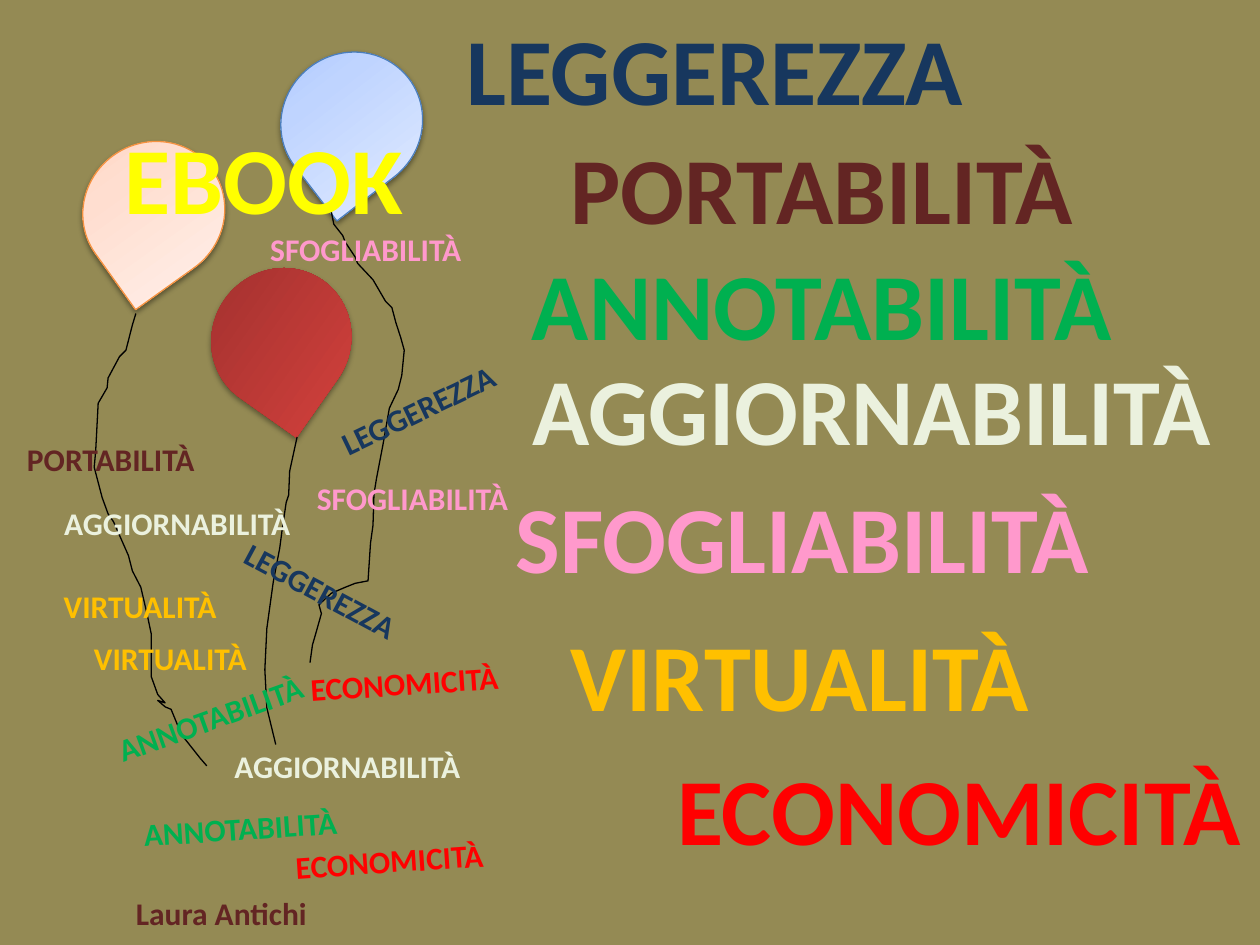
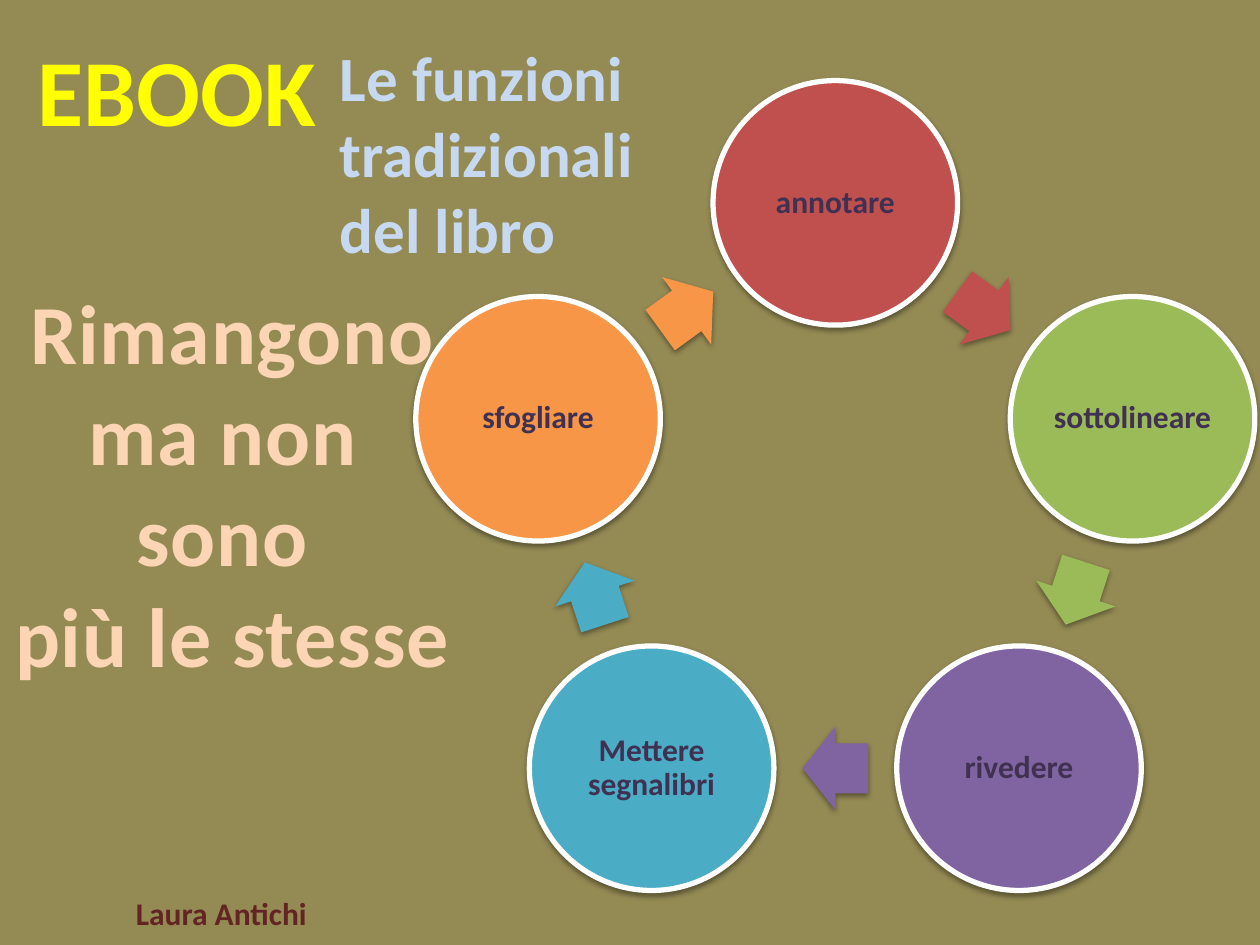
from math import cos, pi, sin

from lxml import etree
from pptx import Presentation
from pptx.dml.color import RGBColor
from pptx.enum.shapes import MSO_SHAPE as SHAPE
from pptx.enum.text import MSO_ANCHOR as ANCHOR, MSO_AUTO_SIZE as AUTO, PP_ALIGN as ALIGN
from pptx.oxml import parse_xml
from pptx.oxml.ns import nsdecls, qn
from pptx.util import Cm, Pt

OLIVE, BROWN, YELLOW, NAVY = "948A54", "632523", "FFFF00", "17375E"
GREEN, CREAM, PINK, AMBER, RED = "00B050", "EBF1DE", "FF99CC", "FFC000", "FF0000"
OUTLINE, PLUM, WHITE, BLACK = "5E457C", "403152", "FFFFFF", "000000"
PALE_BLUE, PEACH = "C6D9F1", "FCD5B5"
BIG, SMALL = 54, 18
LINE_HEIGHT = {BIG: 2.57, SMALL: 1.02}

# left, top, rotation, gradient stops, line, shadow opacity and distance
BALLOONS = [
    (1.65, 2.87, 144.4, [(0, "FFD2BD"), (35, "FFDED0"), (100, "FFF2ED")], "F69240", 38, 1.6),
    (4.22, 5.44, 125.2, [(0, "9C2F2D"), (80, "CB3E3A"), (100, "CE3B37")], None, 35, 1.8),
    (5.64, 1.07, 142.4, [(0, "A4C4FF"), (35, "BFD4FF"), (100, "E6EEFF")], "4B7EBC", 38, 1.6),
]
STRINGS = [
    [(2.74, 6.32), (2.67, 6.55), (2.54, 7.06), (2.41, 7.19), (2.18, 7.62), (2.16, 7.82),
     (1.98, 8.13), (1.93, 9.09), (1.9, 9.42), (2.06, 10.03), (2.18, 10.36), (2.29, 10.52),
     (2.59, 11.2), (2.67, 11.51), (2.84, 11.84), (2.97, 12.4), (3.05, 12.78), (3.05, 13.64),
     (3.18, 14), (3.33, 14.17), (3.18, 14.12), (3.33, 14.25), (3.45, 14.3), (3.66, 14.81),
     (4.04, 15.29), (4.17, 15.44)],
    [(5.99, 8.81), (5.84, 9.5), (5.82, 9.98), (5.77, 10.13), (5.69, 10.67), (5.64, 11.05),
     (5.51, 11.73), (5.46, 12.09), (5.38, 12.67), (5.34, 13.5), (5.38, 14.27), (5.56, 15.01)],
    [(6.68, 4.27), (6.73, 4.52), (6.91, 4.75), (6.96, 4.88), (7.16, 5.18), (7.21, 5.31),
     (7.52, 5.64), (7.77, 6.07), (7.9, 6.2), (7.98, 6.5), (8.08, 6.81), (8.15, 7.06),
     (8.1, 7.57), (8.03, 7.85), (7.85, 8.23), (7.72, 8.97), (7.59, 9.65), (7.54, 9.96),
     (7.52, 10.59), (7.47, 10.95), (7.42, 11.71), (7.16, 11.76), (6.96, 11.84), (6.68, 11.96),
     (6.43, 12.19), (6.48, 12.37), (6.35, 12.83), (6.3, 13), (6.25, 13.36)],
]
# word, colour, big label (left, top, width), small width, small labels (left, top, rotation)
QUALITIES = [
    ("LEGGEREZZA", NAVY, (9.09, 0.1, 10.64), 3.89, [(6.48, 7.75, 334.4), (4.52, 11.4, 28.2)]),
    ("PORTABILITÀ", BROWN, (11.2, 2.49, 10.74), 3.91, [(0.28, 8.74, 0)]),
    ("ANNOTABILITÀ", GREEN, (10.41, 4.83, 12.32), 4.45,
     [(2.01, 13.97, 340.1), (2.62, 16.18, 356.2)]),
    ("AGGIORNABILITÀ", CREAM, (10.41, 6.96, 14.33), 5.11, [(4.45, 14.94, 0), (1.02, 10.03, 0)]),
    ("VIRTUALITÀ", AMBER, (11.2, 12.32, 9.86), 3.61, [(1.63, 12.75, 0), (1.02, 11.71, 0)]),
    ("ECONOMICITÀ", RED, (13.34, 15.01, 11.99), 4.32,
     [(5.69, 16.84, 356.2), (5.99, 13.26, 356.2)]),
    ("SFOGLIABILITÀ", PINK, (10.08, 9.53, 12.19), 4.39, [(5.18, 4.52, 0), (6.12, 9.53, 0)]),
]
FUNCTIONS = [("annotare", "C0504D"), ("sottolineare", "9BBB59"), ("rivedere", "8064A2"),
             ("Mettere segnalibri", "4BACC6"), ("sfogliare", "F79646")]


def rgb(value):
    return RGBColor.from_string(value)


def write(tf, text, size=SMALL, color=BROWN, align=ALIGN.LEFT, outline=None,
          char_space=None, line_spacing=None):
    """Fill a text frame, one paragraph for each line of text."""
    for i, line in enumerate(text.split("\n")):
        p = tf.paragraphs[0] if i == 0 else tf.add_paragraph()
        p.alignment = align
        if line_spacing:
            p.line_spacing = line_spacing
        r = p.add_run()
        r.text = line
        r.font.name, r.font.size, r.font.bold = "Calibri", Pt(size), True
        r.font.color.rgb = rgb(color)
        rpr = r.font._element
        if char_space:
            rpr.set("spc", str(round(char_space * 100)))
        if outline:
            rpr.insert(0, parse_xml(
                f'<a:ln {nsdecls("a")} w="{Pt(0.71)}"><a:solidFill>'
                f'<a:srgbClr val="{outline}"/></a:solidFill></a:ln>'))


class Deck:
    def __init__(self):
        self.prs = Presentation()
        self.prs.slide_width, self.prs.slide_height = Cm(25.4), Cm(19.05)
        fill = self.prs.slide_master.background.fill
        fill.solid()
        fill.fore_color.rgb = rgb(OLIVE)

    def new_slide(self):
        self.s = self.prs.slides.add_slide(self.prs.slide_layouts[6])
        self.text("Laura Antichi", 2.49, 17.9, 18.44, 1.02)

    def text(self, text, left, top, width, height, rotation=0, wrap=True, **style):
        sp = self.s.shapes.add_textbox(Cm(left), Cm(top), Cm(width), Cm(height))
        sp.rotation = rotation
        tf = sp.text_frame
        tf.word_wrap, tf.auto_size = wrap, AUTO.SHAPE_TO_FIT_TEXT
        write(tf, text, **style)

    def label(self, text, left, top, width, color, size=BIG, rotation=0):
        """Add a centred, outlined word on one line."""
        self.text(text, left, top, width, LINE_HEIGHT[size], rotation, wrap=False, size=size,
                  color=color, align=ALIGN.CENTER, outline=OUTLINE)

    def heading(self, left, top):
        self.label("EBOOK", left, top, 6.17, YELLOW)

    def shape(self, kind, left, top, width, height, fill=None, line=None, line_width=0.75,
              rotation=0, opacity=38, distance=1.6):
        """Add a preset shape with a soft shadow below it."""
        sp = self.s.shapes.add_shape(kind, Cm(left), Cm(top), Cm(width), Cm(height))
        sp.rotation = rotation
        if fill:
            sp.fill.solid()
            sp.fill.fore_color.rgb = rgb(fill)
        self.outline(sp, line, line_width)
        sp.shadow.inherit = False
        effects = sp._element.spPr.find(qn("a:effectLst"))
        effects.append(parse_xml(
            f'<a:outerShdw {nsdecls("a")} blurRad="{Pt(3.1)}" dist="{Pt(distance)}" '
            f'dir="5400000" rotWithShape="0"><a:srgbClr val="{BLACK}">'
            f'<a:alpha val="{opacity * 1000}"/></a:srgbClr></a:outerShdw>'))
        return sp

    def outline(self, sp, color, width):
        if color:
            sp.line.color.rgb = rgb(color)
            sp.line.width = Pt(width)
        else:
            sp.line.fill.background()

    def balloon(self, left, top, rotation, stops, line, opacity, distance):
        sp = self.shape(SHAPE.TEAR, left, top, 2.9, 2.79, line=line, rotation=rotation,
                        opacity=opacity, distance=distance)
        sp.fill.gradient()
        grad = sp._element.spPr.find(qn("a:gradFill"))
        for child in list(grad):
            grad.remove(child)
        gs_list = etree.SubElement(grad, qn("a:gsLst"))
        for position, color in stops:
            gs = etree.SubElement(gs_list, qn("a:gs"), pos=str(position * 1000))
            etree.SubElement(gs, qn("a:srgbClr"), val=color)
        etree.SubElement(grad, qn("a:lin"), ang=str(270 * 60000), scaled="0")
        grad.set("rotWithShape", "1")

    def string(self, points):
        start, *rest = [(round(x * 100), round(y * 100)) for x, y in points]
        builder = self.s.shapes.build_freeform(*start, scale=Cm(0.01))
        builder.add_line_segments(rest, close=False)
        sp = builder.convert_to_shape()
        sp.fill.background()
        sp.shadow.inherit = False
        self.outline(sp, BLACK, 0.75)

    def circle(self, text, x, y, size, color):
        sp = self.shape(SHAPE.OVAL, x - size / 2, y - size / 2, size, size, color, WHITE, 3)
        tf = sp.text_frame
        tf.word_wrap, tf.vertical_anchor = True, ANCHOR.MIDDLE
        tf.margin_left = tf.margin_right = tf.margin_top = tf.margin_bottom = Cm(0.08)
        write(tf, text, color=PLUM, align=ALIGN.CENTER, line_spacing=0.9)

    def arrow(self, x, y, rotation, color):
        width, height = 1.32, 1.68
        sp = self.shape(SHAPE.RIGHT_ARROW, x - width / 2, y - height / 2, width, height, color,
                        rotation=rotation)
        sp.adjustments[0], sp.adjustments[1] = 0.6, 0.5

    def cycle(self, steps, x, y, radius, size):
        """Set circles clockwise on a ring, with an arrow midway to each next one."""
        turn = 2 * pi / len(steps)
        apothem = radius * cos(turn / 2)
        for i, (text, color) in enumerate(steps):
            angle, middle = i * turn, (i + 0.5) * turn
            self.circle(text, x + radius * sin(angle), y - radius * cos(angle), size, color)
            self.arrow(x + apothem * sin(middle), y - apothem * cos(middle),
                       middle * 180 / pi, color)


def qualities_slide(deck):
    deck.new_slide()
    for balloon in BALLOONS:
        deck.balloon(*balloon)
    for points in STRINGS:
        deck.string(points)
    deck.heading(2.24, 2.29)
    for word, color, big, small_width, places in QUALITIES:
        deck.label(word, *big, color)
        for left, top, rotation in places:
            deck.label(word, left, top, small_width, color, SMALL, rotation)


def functions_slide(deck):
    deck.new_slide()
    deck.heading(0.48, 0.53)
    deck.text("Le funzioni\ntradizionali del libro", 6.6, 0.66, 6.6, 4.88, size=36,
              color=PALE_BLUE)
    deck.cycle(FUNCTIONS, x=16.84, y=10.39, radius=6.3, size=4.93)
    deck.text("Rimangono\nma non \nsono \npiù le stesse", 0, 5.54, 9.37, 8.46, wrap=False,
              size=48, color=PEACH, align=ALIGN.CENTER, char_space=0.5)


def main():
    deck = Deck()
    qualities_slide(deck)
    functions_slide(deck)
    deck.prs.save("out.pptx")


if __name__ == "__main__":
    main()
